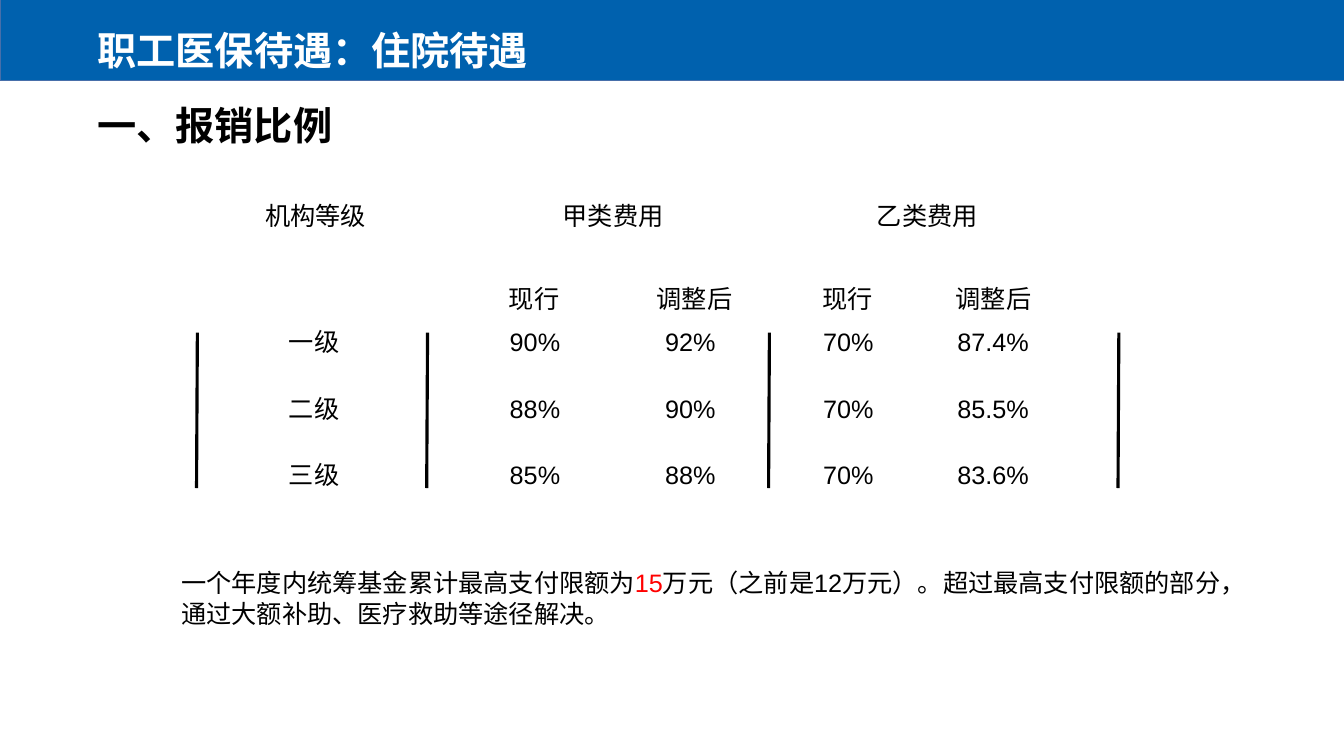
from dataclasses import dataclass

from lxml import etree
from pptx import Presentation
from pptx import util as u
from pptx.dml.color import RGBColor
from pptx.enum import shapes, text
from pptx.oxml.ns import qn

BLUE = RGBColor(0x00, 0x61, 0xAE)
EDGE = RGBColor(0x47, 0x6F, 0xAA)
WHITE = RGBColor(0xFF, 0xFF, 0xFF)
BLACK = RGBColor(0x00, 0x00, 0x00)
RED = RGBColor(0xFF, 0x00, 0x00)
SANS = "Noto Sans CJK SC"

WIDTH, HEIGHT = u.Inches(13.33), u.Inches(7.5)
COLS, ROWS = 16, 9

PLAIN = {"name": "Arial", "size": u.Pt(18), "bold": False}
HEAVY = {"name": SANS, "size": u.Pt(28), "bold": True}

HEAD_ROW, SUB_ROW, TOP_ROW, STEP = 2.32, 3.31, 3.83, 0.79
LINE_TOP, LINE_END, LEAN = 3.96, 5.81, 0.01
CELL = 0.53


@dataclass(frozen=True)
class Box:
    """Place on the slide, in grid columns and rows."""
    col: float
    row: float
    wide: float
    high: float = CELL

    def spot(self) -> tuple[int, int, int, int]:
        return (across(self.col), down(self.row),
                across(self.wide), down(self.high))


@dataclass(frozen=True)
class Part:
    words: str
    color: RGBColor = BLACK


@dataclass(frozen=True)
class Column:
    col: float
    wide: float
    cells: tuple[str, ...]
    label: str = ""
    label_col: float = 0
    label_wide: float = 0


HEADS = {"机构等级": 3.04, "甲类费用": 6.58, "乙类费用": 10.32}
TABLE = (
    Column(3.32, 1.66, ("一级", "二级", "三级")),
    Column(5.95, 1.66, ("90%", "88%", "85%"), "现行", 5.94, 0.88),
    Column(7.8, 1.06, ("92%", "90%", "88%"), "调整后", 7.7, 1.24),
    Column(9.68, 1.66, ("70%", "70%", "70%"), "现行", 9.67, 0.88),
    Column(11.28, 1.24, ("87.4%", "85.5%", "83.6%"), "调整后", 11.26, 1.28),
)
RULES = (2.35, 5.09, 9.16, 13.32)
NOTE = (
    Part("一个年度内统筹基金累计最高支付限额为"),
    Part("15", RED),
    Part("万元（之前是12万元）。超过最高支付限额的部分，"
         "通过大额补助、医疗救助等途径解决。"),
)


def across(cols: float) -> int:
    return round(WIDTH * cols / COLS)


def down(rows: float) -> int:
    return round(HEIGHT * rows / ROWS)


def write(shape, parts: tuple[Part, ...], form: dict) -> None:
    para = shape.text_frame.paragraphs[0]
    para.alignment = text.PP_ALIGN.LEFT
    for part in parts:
        run = para.add_run()
        run.text = part.words
        for key, value in form.items():
            setattr(run.font, key, value)
        run.font.color.rgb = part.color
        east = etree.SubElement(run._r.get_or_add_rPr(), qn("a:ea"))
        east.set("typeface", SANS)


def add_text(slide, box: Box, *parts: Part, form: dict = PLAIN) -> None:
    shape = slide.shapes.add_textbox(*box.spot())
    shape.text_frame.word_wrap = True
    write(shape, parts, form)


def add_title(slide) -> None:
    """Set the title on a blue band that lies behind it."""
    title = slide.shapes.title
    spot = Box(1.04, 0.25, 5.64, 0.68).spot()
    for key, value in zip(("left", "top", "width", "height"), spot):
        setattr(title, key, value)
    frame = title.text_frame
    frame.word_wrap = False
    frame.auto_size = text.MSO_AUTO_SIZE.NONE
    frame.vertical_anchor = text.MSO_ANCHOR.MIDDLE
    write(title, (Part("职工医保待遇：住院待遇", WHITE),), HEAVY)

    band = slide.shapes.add_shape(shapes.MSO_SHAPE.RECTANGLE,
                                  *Box(0, -0.01, 16.06, 0.97).spot())
    band.shadow.inherit = False
    band.fill.solid()
    band.fill.fore_color.rgb = BLUE
    band.line.color.rgb = EDGE
    band.line.width = u.Pt(1)
    title.element.addprevious(band.element)


def add_rule(slide, col: float) -> None:
    rule = slide.shapes.add_connector(
        shapes.MSO_CONNECTOR.STRAIGHT, across(col), down(LINE_TOP),
        across(col - LEAN), down(LINE_END))
    rule.line.color.rgb = BLACK
    rule.line.width = u.Pt(2.25)
    etree.SubElement(rule.element.spPr, qn("a:effectLst"))


def add_column(slide, item: Column) -> None:
    if item.label:
        add_text(slide, Box(item.label_col, SUB_ROW, item.label_wide),
                 Part(item.label))
    for i, words in enumerate(item.cells):
        add_text(slide, Box(item.col, TOP_ROW + i * STEP, item.wide),
                 Part(words))


def main() -> None:
    deck = Presentation()
    deck.slide_width, deck.slide_height = WIDTH, HEIGHT
    slide = deck.slides.add_slide(deck.slide_layouts[5])

    add_title(slide)
    add_text(slide, Box(1.04, 1.15, 8, 0.68), Part("一、报销比例"), form=HEAVY)
    for words, col in HEADS.items():
        add_text(slide, Box(col, HEAD_ROW, 1.66), Part(words))
    for item in TABLE:
        add_column(slide, item)
    for col in RULES:
        add_rule(slide, col)
    add_text(slide, Box(2.04, 6.7, 13.02, 0.86), *NOTE)

    deck.save("out.pptx")


if __name__ == "__main__":
    main()
